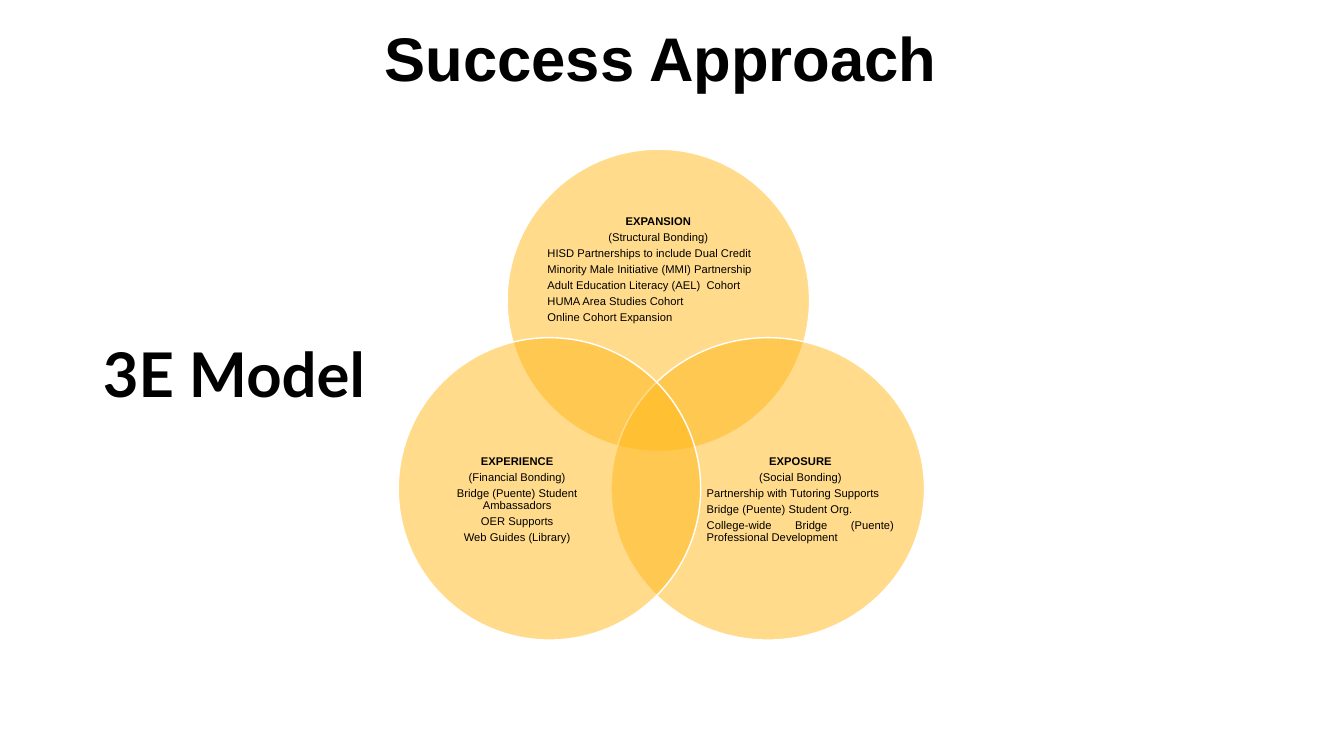
from dataclasses import dataclass

from lxml import etree
from pptx import Presentation
from pptx.dml.color import RGBColor
from pptx.enum import shapes, text
from pptx.oxml import ns
from pptx.util import Inches, Pt

BLACK, WHITE, GOLD = "000000", "FFFFFF", "FFB819"
CENTER, JUSTIFY, LEFT = text.PP_ALIGN.CENTER, text.PP_ALIGN.JUSTIFY, text.PP_ALIGN.LEFT


@dataclass
class Bond:
    circle: tuple[float, float, float, float]
    label: tuple[float, float, float, float]
    name: str
    kind: str
    items: list[str]
    align: text.PP_ALIGN


BONDS = [
    Bond((5.03, 1.48, 3, 3), (5.43, 2, 2.2, 1.35), "EXPANSION", "(Structural Bonding)",
         ["HISD Partnerships to include Dual Credit",
          "Minority Male Initiative (MMI) Partnership",
          "Adult Education Literacy (AEL)  Cohort",
          "HUMA Area Studies Cohort",
          "Online Cohort Expansion"], JUSTIFY),
    Bond((6.06, 3.35, 3.11, 3), (7.01, 4.13, 1.86, 1.65), "EXPOSURE", "(Social Bonding)",
         ["Partnership with Tutoring Supports",
          "Bridge (Puente) Student Org.",
          "College-wide Bridge (Puente) Professional Development"], JUSTIFY),
    Bond((3.95, 3.35, 3, 3), (4.23, 4.13, 1.8, 1.65), "EXPERIENCE", "(Financial Bonding)",
         ["Bridge (Puente) Student Ambassadors",
          "OER Supports",
          "Web Guides (Library)"], CENTER),
]


def color(value: str) -> RGBColor:
    return RGBColor.from_string(value)


def box(at: tuple[float, float, float, float]) -> list[int]:
    return [Inches(v) for v in at]


def style(p, font: str, size: float, bold: bool, align: text.PP_ALIGN, spacing) -> None:
    p.alignment = align
    p.line_spacing = spacing
    for r in p.runs:
        r.font.name, r.font.size, r.font.bold = font, Pt(size), bold
        r.font.color.rgb = color(BLACK)


def add_circle(group, bond: Bond) -> None:
    sp = group.shapes.add_shape(shapes.MSO_SHAPE.OVAL, *box(bond.circle))
    sp.shadow.inherit = False
    sp.fill.solid()
    sp.fill.fore_color.rgb = color(GOLD)
    fill = sp.fill._xPr.find(ns.qn("a:solidFill"))
    etree.SubElement(fill[0], ns.qn("a:alpha"), val="50000")
    sp.line.color.rgb = color(WHITE)
    sp.line.width = Pt(1)


def add_label(group, bond: Bond) -> None:
    tf = group.shapes.add_textbox(*box(bond.label)).text_frame
    tf.word_wrap = True
    tf.vertical_anchor = text.MSO_ANCHOR.MIDDLE
    tf.margin_left = tf.margin_top = tf.margin_right = tf.margin_bottom = 0
    tf.text = "\n".join([bond.name, bond.kind, *bond.items])
    for i, p in enumerate(tf.paragraphs):
        style(p, "Arial", 8, i == 0, CENTER if i < 2 else bond.align, 0.9)
        p.space_after = Pt(2.8)


def main() -> None:
    prs = Presentation()
    prs.slide_width, prs.slide_height = Inches(13.33), Inches(7.5)
    s = prs.slides.add_slide(prs.slide_layouts[5])

    # Model name on the left
    title = s.shapes.title
    title.left, title.top, title.width, title.height = box((0.92, 0, 3.5, 7.5))
    tf = title.text_frame
    tf.text = "3E Model"
    tf.word_wrap = True
    tf.auto_size = text.MSO_AUTO_SIZE.NONE
    tf.vertical_anchor = text.MSO_ANCHOR.MIDDLE
    style(tf.paragraphs[0], "Lato", 44, True, LEFT, 0.9)

    # Venn diagram
    venn = s.shapes.add_group_shape()
    for bond in BONDS:
        add_circle(venn, bond)
        add_label(venn, bond)

    # Heading
    tf = s.shapes.add_textbox(*box((3.41, 0.28, 6.29, 1.31))).text_frame
    tf.word_wrap = True
    tf.vertical_anchor = text.MSO_ANCHOR.TOP
    tf.text = "Success Approach"
    style(tf.paragraphs[0], "Arial", 44, True, CENTER, Pt(43))

    prs.save("out.pptx")


if __name__ == "__main__":
    main()
